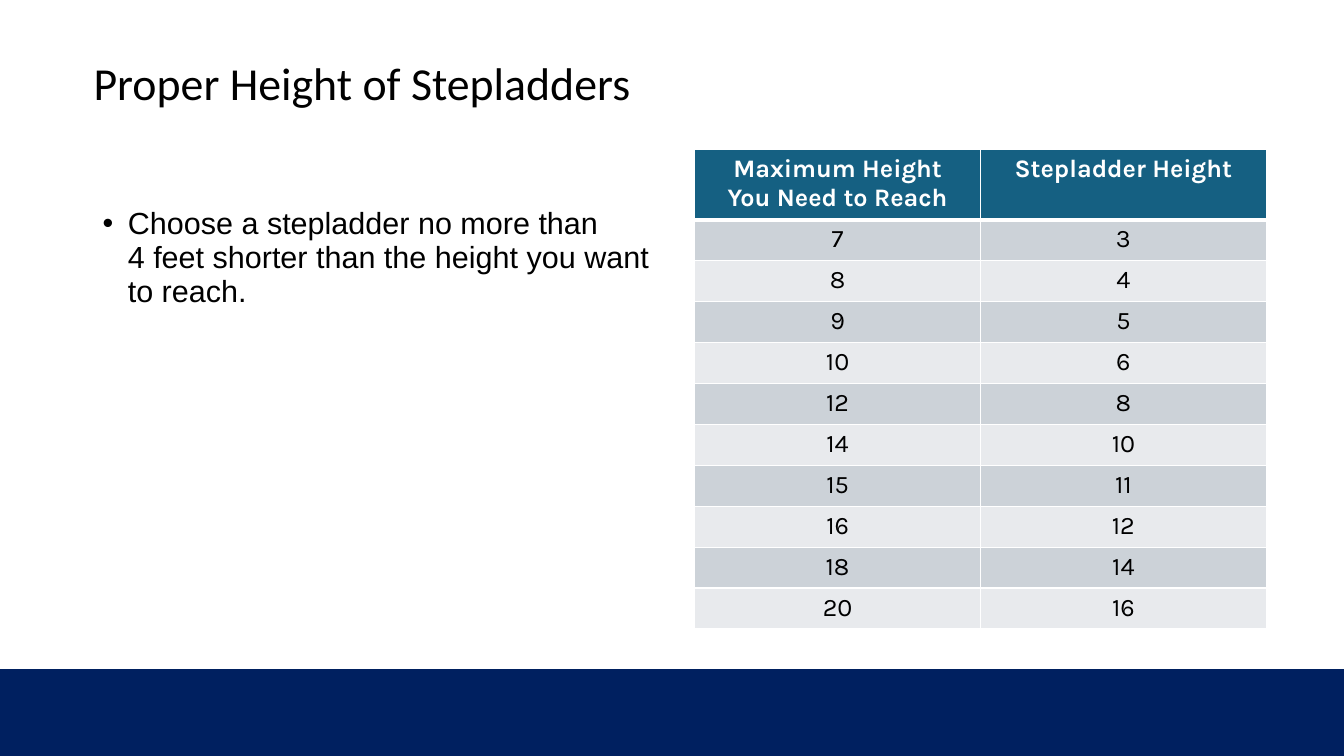
from lxml import etree
from pptx import Presentation
from pptx.dml.color import RGBColor
from pptx.enum.shapes import MSO_SHAPE
from pptx.enum.text import MSO_ANCHOR, PP_ALIGN
from pptx.oxml.ns import qn
from pptx.util import Inches, Pt

# Content
TITLE = "Proper Height of Stepladders"
ADVICE = ["Choose a stepladder no more than ",
          "4 feet shorter than the height you want to reach."]
HEADER = [["Maximum Height", "You Need to Reach"], ["Stepladder Height"]]
HEIGHTS = [(7, 3), (8, 4), (9, 5), (10, 6), (12, 8),
           (14, 10), (15, 11), (16, 12), (18, 14), (20, 16)]
COLORS = {"navy": "002060", "teal": "156082", "dark_band": "CCD2D8",
          "light_band": "E8EAED", "white": "FFFFFF", "black": "000000"}

SLIDE_W, SLIDE_H = 13.33, 7.5
FOOTER_H = 0.85
TABLE_X, TABLE_Y, TABLE_W, TABLE_H = 6.89, 1.48, 5.67, 4.74
HEADER_H = 0.68


def rgb(name):
    return RGBColor.from_string(COLORS[name])


def add_run(p, text, font, size, color="black", bold=False):
    r = p.add_run()
    r.text = text
    r.font.name, r.font.size, r.font.bold = font, Pt(size), bold
    r.font.color.rgb = rgb(color)


def add_text_box(s, x, y, w, h, anchor, spacing):
    tf = s.shapes.add_textbox(Inches(x), Inches(y), Inches(w), Inches(h)).text_frame
    tf.word_wrap = True
    tf.vertical_anchor = anchor
    p = tf.paragraphs[0]
    p.line_spacing = spacing
    return p


def set_borders(cell, bottom):
    tc_pr = cell._tc.get_or_add_tcPr()
    for i, (side, width) in enumerate([("lnL", 1), ("lnR", 1), ("lnT", 1), ("lnB", bottom)]):
        ln = etree.Element(qn(f"a:{side}"), w=str(Pt(width)))
        fill = etree.SubElement(ln, qn("a:solidFill"))
        etree.SubElement(fill, qn("a:srgbClr"), val=COLORS["white"])
        tc_pr.insert(i, ln)


def fill_cell(cell, lines, fill, color, bold, bottom):
    cell.fill.solid()
    cell.fill.fore_color.rgb = rgb(fill)
    set_borders(cell, bottom)
    tf = cell.text_frame
    for i, line in enumerate(lines):
        p = tf.add_paragraph() if i else tf.paragraphs[0]
        p.alignment = PP_ALIGN.CENTER
        add_run(p, line, "Karla", 18, color, bold)


prs = Presentation()
prs.slide_width, prs.slide_height = Inches(SLIDE_W), Inches(SLIDE_H)
s = prs.slides.add_slide(prs.slide_layouts[6])

# Footer band
sp = s.shapes.add_shape(MSO_SHAPE.RECTANGLE, 0, Inches(SLIDE_H - FOOTER_H),
                        Inches(SLIDE_W), Inches(FOOTER_H))
sp.shadow.inherit = False
sp.fill.solid()
sp.fill.fore_color.rgb = rgb("navy")
sp.line.color.rgb = rgb("navy")
sp.line.width = Pt(1.5)

# Title
p = add_text_box(s, 0.83, 0.32, 11.5, 1.05, MSO_ANCHOR.MIDDLE, 0.9)
add_run(p, TITLE, "Calibri", 32.7)

# Bulleted advice
p = add_text_box(s, 0.92, 2, 5.67, 4.76, MSO_ANCHOR.TOP, 0.94)
p_pr = p._p.get_or_add_pPr()
p_pr.set("marL", str(Inches(0.25)))
p_pr.set("indent", str(Inches(-0.25)))
etree.SubElement(p_pr, qn("a:buFont"), typeface="Arial")
etree.SubElement(p_pr, qn("a:buChar"), char="•")
add_run(p, ADVICE[0], "Arial", 21.8)
p.add_line_break()
add_run(p, ADVICE[1], "Arial", 21.8)

# Height table
table = s.shapes.add_table(len(HEIGHTS) + 1, len(HEADER), Inches(TABLE_X), Inches(TABLE_Y),
                           Inches(TABLE_W), Inches(TABLE_H)).table
table.rows[0].height = Inches(HEADER_H)
for col, lines in enumerate(HEADER):
    table.columns[col].width = Inches(TABLE_W / len(HEADER))
    fill_cell(table.cell(0, col), lines, "teal", "white", True, 3)
for row, pair in enumerate(HEIGHTS, 1):
    table.rows[row].height = Inches((TABLE_H - HEADER_H) / len(HEIGHTS))
    band = "dark_band" if row % 2 else "light_band"
    for col, feet in enumerate(pair):
        fill_cell(table.cell(row, col), [str(feet)], band, "black", False, 1)

prs.save("out.pptx")
